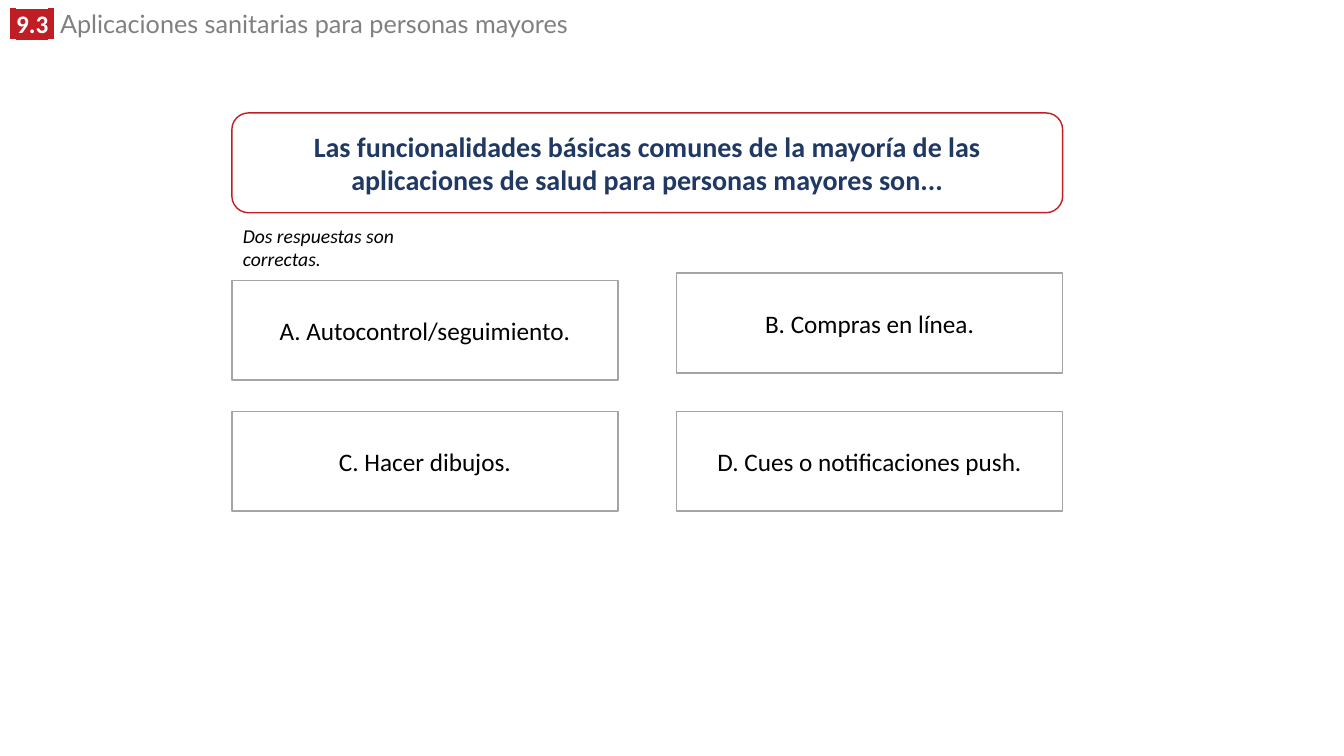
from dataclasses import dataclass

from lxml import etree
from pptx import Presentation
from pptx import util as u
from pptx.dml.color import RGBColor
from pptx.enum import shapes, text
from pptx.oxml.ns import qn


@dataclass(frozen=True)
class Theme:
    red: str = "C01E24"
    navy: str = "203864"
    grey: str = "808080"
    border: str = "A5A5A5"
    black: str = "000000"
    white: str = "FFFFFF"
    heading: float = 18
    question: float = 20
    answer: float = 18
    hint: float = 14
    body_font: str = "Calibri"
    heading_font: str = "Lato"


@dataclass(frozen=True)
class Grid:
    """Two columns and two rows of answers, in inches."""
    left: float = 2.3
    top: float = 2.78
    cell_width: float = 3.83
    cell_height: float = 0.99
    column_step: float = 4.41
    row_step: float = 1.3

    @property
    def width(self) -> float:
        return self.column_step + self.cell_width


@dataclass(frozen=True)
class Words:
    content: str
    size: float
    color: str
    font: str
    bold: bool = False
    italic: bool = False
    highlight: str = ""


@dataclass(frozen=True)
class Answer:
    content: str
    column: int
    row: int
    shift: float = 0


THEME = Theme()
GRID = Grid()

HEADING = [
    Words(content, THEME.heading, THEME.white, font, True, highlight=THEME.red)
    for content, font in ((" ", THEME.heading_font), ("9.3", THEME.body_font),
                          (" ", THEME.heading_font))
] + [Words(" Aplicaciones sanitarias para personas mayores", THEME.heading,
           THEME.grey, THEME.heading_font)]

QUESTION = Words(
    "Las funcionalidades básicas comunes de la mayoría de las aplicaciones "
    "de salud para personas mayores son...",
    THEME.question, THEME.navy, THEME.body_font, bold=True)

HINT = Words("Dos respuestas son correctas.", THEME.hint, THEME.black,
             THEME.body_font, italic=True)

ANSWERS = [
    Answer("A. Autocontrol/seguimiento.", 0, 0),
    Answer("B. Compras en línea.", 1, 0, shift=-0.07),
    Answer("C. Hacer dibujos.", 0, 1),
    Answer("D. Cues o notificaciones push.", 1, 1),
]


def write(paragraph, words: Words) -> None:
    run = paragraph.add_run()
    run.text = words.content
    formats = {"size": u.Pt(words.size), "name": words.font,
               "bold": words.bold, "italic": words.italic}
    for key, value in formats.items():
        setattr(run.font, key, value)
    run.font.color.rgb = RGBColor.from_string(words.color)
    if words.highlight:
        marker = etree.Element(qn("a:highlight"))
        etree.SubElement(marker, qn("a:srgbClr"), val=words.highlight)
        run.font.fill  # the highlight must follow the text fill
        run._r.rPr.find(qn("a:solidFill")).addnext(marker)


def add_label(slide, left: float, top: float, width: float, height: float,
              parts: list[Words], spacing: float = 1) -> None:
    label = slide.shapes.add_textbox(*map(u.Inches, (left, top, width, height)))
    label.text_frame.word_wrap = True
    paragraph = label.text_frame.paragraphs[0]
    paragraph.line_spacing = spacing
    for words in parts:
        write(paragraph, words)


def add_card(slide, outline: shapes.MSO_SHAPE, left: float, top: float,
             width: float, border: str, words: Words) -> None:
    card = slide.shapes.add_shape(
        outline, *map(u.Inches, (left, top, width, GRID.cell_height)))
    card.shadow.inherit = False
    card.fill.solid()
    card.fill.fore_color.rgb = RGBColor.from_string(THEME.white)
    card.line.color.rgb = RGBColor.from_string(border)
    card.line.width = u.Pt(1)
    frame = card.text_frame
    frame.word_wrap = True
    frame.vertical_anchor = text.MSO_ANCHOR.MIDDLE
    frame.paragraphs[0].alignment = text.PP_ALIGN.CENTER
    write(frame.paragraphs[0], words)


def main() -> None:
    deck = Presentation()
    deck.slide_width, deck.slide_height = u.Inches(13.33), u.Inches(7.5)
    quiz = deck.slides.add_slide(deck.slide_layouts[6])

    # Section heading
    add_label(quiz, 0, 0.09, 9.52, 0.35, HEADING, spacing=0.8)

    # Question and hint
    add_card(quiz, shapes.MSO_SHAPE.ROUNDED_RECTANGLE, GRID.left, 1.12,
             GRID.width, THEME.red, QUESTION)
    add_label(quiz, GRID.left + 0.01, 2.17, 2.2, 0.34, [HINT])

    # Answers
    for answer in ANSWERS:
        add_card(quiz, shapes.MSO_SHAPE.RECTANGLE,
                 GRID.left + answer.column * GRID.column_step,
                 GRID.top + answer.row * GRID.row_step + answer.shift,
                 GRID.cell_width, THEME.border,
                 Words(answer.content, THEME.answer, THEME.black,
                       THEME.body_font))

    deck.save("out.pptx")


if __name__ == "__main__":
    main()
